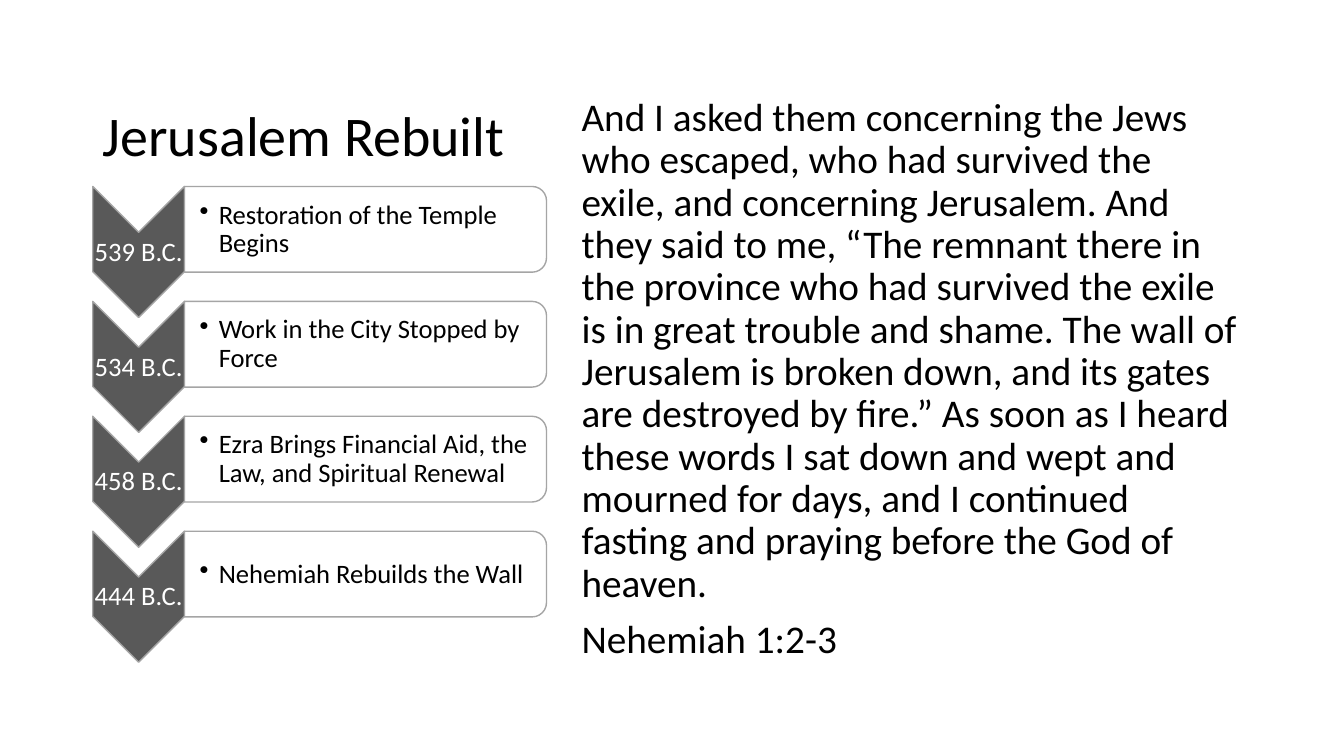
from dataclasses import dataclass

from lxml.etree import SubElement
from pptx import Presentation
from pptx.dml.color import RGBColor
from pptx.enum.shapes import MSO_SHAPE
from pptx.enum.text import MSO_ANCHOR, MSO_AUTO_SIZE, PP_ALIGN
from pptx.oxml.ns import qn
from pptx.shapes.autoshape import Shape
from pptx.slide import Slide
from pptx.text.text import TextFrame
from pptx.util import Emu, Pt

PX = 9144  # EMU; 100 px to the inch


@dataclass(frozen=True)
class Theme:
    font: str = "Calibri"
    ink: str = "000000"
    paper: str = "FFFFFF"
    chevron: str = "595959"
    outline: str = "A5A5A5"
    title_size: int = 40
    verse_size: int = 28
    event_size: int = 19


@dataclass(frozen=True)
class Box:
    left: int
    top: int
    width: int
    height: int

    def emu(self) -> tuple[Emu, ...]:
        return tuple(Emu(n * PX) for n in (self.left, self.top, self.width, self.height))


@dataclass(frozen=True)
class Event:
    year: str
    deed: str


THEME = Theme()
FIRST_ROW, ROW_PITCH = 185, 114
TITLE = "Jerusalem Rebuilt"
VERSE = (
    "And I asked them concerning the Jews who escaped, who had survived the exile, "
    "and concerning Jerusalem. And they said to me, “The remnant there in the province "
    "who had survived the exile is in great trouble and shame. The wall of Jerusalem is "
    "broken down, and its gates are destroyed by fire.” As soon as I heard these words "
    "I sat down and wept and mourned for days, and I continued fasting and praying "
    "before the God of heaven."
)
REFERENCE = "Nehemiah 1:2-3"
EVENTS = (
    Event("539 B.C.", "Restoration of the Temple Begins"),
    Event("534 B.C.", "Work in the City Stopped by Force"),
    Event("458 B.C.", "Ezra Brings Financial Aid, the Law, and Spiritual Renewal"),
    Event("444 B.C.", "Nehemiah Rebuilds the Wall"),
)


def write(frame: TextFrame, paragraphs: tuple[str, ...], size: int, color: str = THEME.ink,
          align: PP_ALIGN = PP_ALIGN.LEFT, anchor: MSO_ANCHOR = MSO_ANCHOR.MIDDLE,
          before: int = 0, margins: tuple[int, int, int, int] = (10, 5, 10, 5)) -> None:
    """Fill the frame; margins are left, top, right, bottom in px."""
    frame.text = "\n".join(paragraphs)
    frame_format = {"word_wrap": True, "auto_size": MSO_AUTO_SIZE.NONE, "vertical_anchor": anchor}
    for side, margin in zip(("left", "top", "right", "bottom"), margins):
        frame_format[f"margin_{side}"] = Emu(margin * PX)
    for key, value in frame_format.items():
        setattr(frame, key, value)
    paragraph_format = {"alignment": align, "line_spacing": 0.9, "space_before": Pt(before)}
    for paragraph in frame.paragraphs:
        for key, value in paragraph_format.items():
            setattr(paragraph, key, value)
        for run in paragraph.runs:
            run.font.name, run.font.size = THEME.font, Pt(size)
            run.font.color.rgb = RGBColor.from_string(color)


def add_text(slide: Slide, box: Box) -> TextFrame:
    return slide.shapes.add_textbox(*box.emu()).text_frame


def add_bullet(frame: TextFrame, indent: int) -> None:
    properties = frame.paragraphs[0]._p.get_or_add_pPr()
    for key, value in {"marL": indent * PX, "indent": -indent * PX}.items():
        properties.set(key, str(value))
    SubElement(properties, qn("a:buChar")).set("char", "•")


def add_turned(slide: Slide, preset: MSO_SHAPE, seen: Box, fill: str) -> Shape:
    """Draw a preset turned by 90 degrees so that it covers the box as seen."""
    left, top, width, height = seen.emu()
    shift = (width - height) // 2
    shape = slide.shapes.add_shape(preset, left + shift, top - shift, height, width)
    shape.rotation = 90
    shape.shadow.inherit = False
    shape.fill.solid()
    shape.fill.fore_color.rgb = RGBColor.from_string(fill)
    shape.line.color.rgb = RGBColor.from_string(THEME.outline)
    shape.line.width = Pt(1)
    return shape


def set_opacity(shape: Shape, percent: int) -> None:
    color = shape._element.spPr.find(qn("a:solidFill"))[0]
    SubElement(color, qn("a:alpha")).set("val", str(percent * 1000))


def add_event(slide: Slide, event: Event, top: int) -> None:
    add_turned(slide, MSO_SHAPE.CHEVRON, Box(92, top, 91, 130), THEME.chevron)
    year = add_text(slide, Box(92, top + 46, 91, 39))
    write(year, (event.year,), THEME.event_size, THEME.paper, PP_ALIGN.CENTER,
          margins=(1, 1, 1, 1))
    panel = add_turned(slide, MSO_SHAPE.ROUND_2_SAME_RECTANGLE, Box(183, top, 359, 85),
                       THEME.paper)
    set_opacity(panel, 90)
    deed = add_text(slide, Box(183, top + 5, 355, 76))
    write(deed, (event.deed,), THEME.event_size, margins=(15, 1, 1, 1))
    add_bullet(deed, 19)


def main() -> None:
    deck = Presentation()
    deck.slide_width, deck.slide_height = Emu(1333 * PX), Emu(750 * PX)
    slide = deck.slides.add_slide(deck.slide_layouts.get_by_name("Title Only"))
    title = slide.shapes.title
    title.left, title.top, title.width, title.height = Box(92, 50, 430, 175).emu()
    write(title.text_frame, (TITLE,), THEME.title_size)
    passage = add_text(slide, Box(567, 92, 675, 567))
    write(passage, (VERSE, REFERENCE), THEME.verse_size, anchor=MSO_ANCHOR.TOP, before=10)
    for row, event in enumerate(EVENTS):
        add_event(slide, event, FIRST_ROW + row * ROW_PITCH)
    deck.save("out.pptx")


if __name__ == "__main__":
    main()
